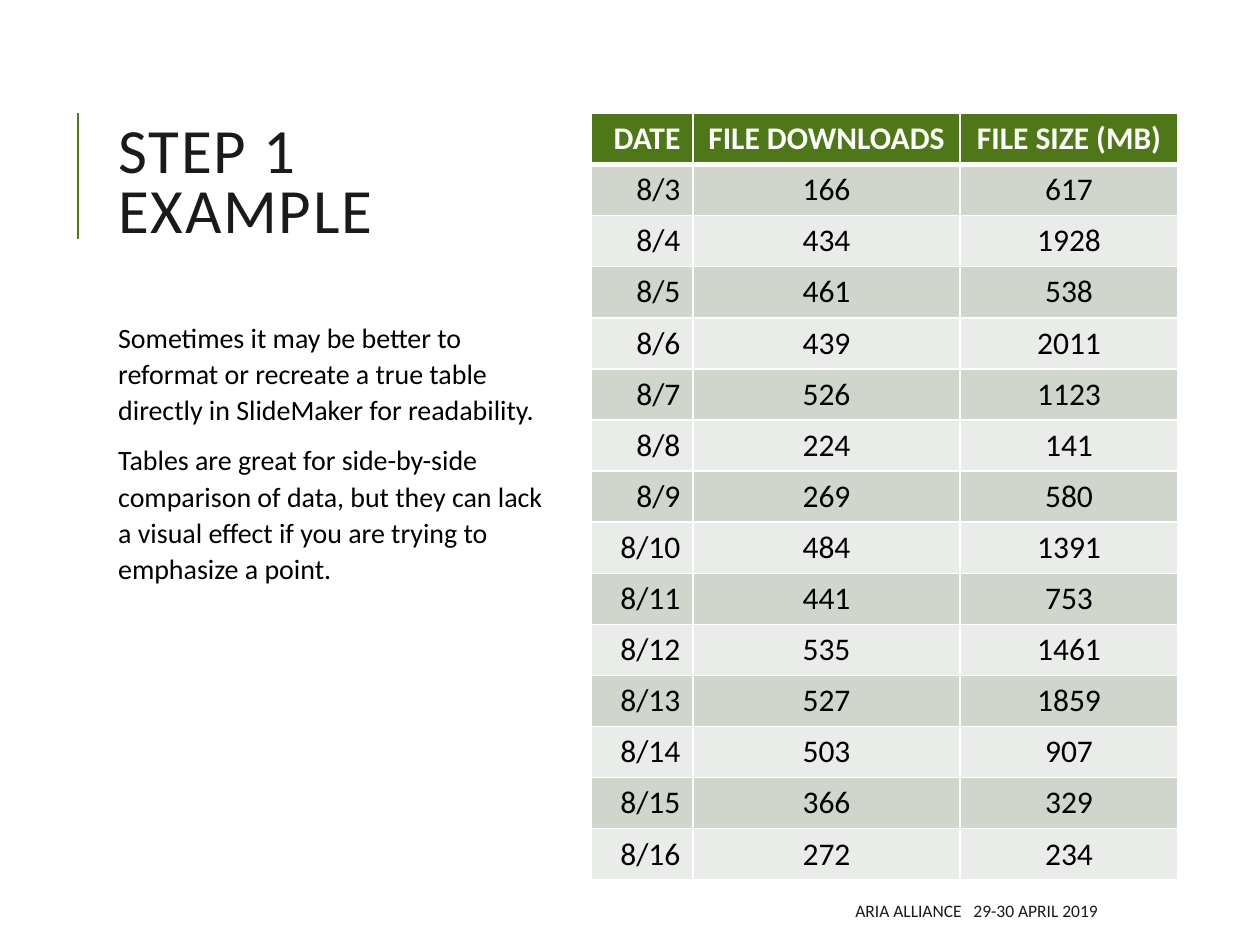
from dataclasses import dataclass

from lxml.etree import SubElement
from pptx import Presentation
from pptx.dml.color import RGBColor
from pptx.enum.shapes import MSO_CONNECTOR
from pptx.enum.text import MSO_ANCHOR, MSO_AUTO_SIZE, PP_ALIGN
from pptx.oxml.ns import qn
from pptx.util import Inches, Pt

TITLE = "STEP 1 EXAMPLE"
NOTES = [
    "Sometimes it may be better to reformat or recreate a true table "
    "directly in SlideMaker for readability.",
    "Tables are great for side-by-side comparison of data, but they can lack "
    "a visual effect if you are trying to emphasize a point.",
]
# Each footer run with its extra letter spacing in points
FOOTER = [("ARIA ALLIANCE", 0), (" ", 4.5), ("29-30 APRIL 2019", 0)]

HEADINGS = ("DATE", "FILE DOWNLOADS", "FILE SIZE (MB)")
FIRST_DAY = 3
DOWNLOADS = [166, 434, 461, 439, 526, 224, 269, 484, 441, 535, 527, 503, 366, 272]
SIZES_MB = [617, 1928, 538, 2011, 1123, 141, 580, 1391, 753, 1461, 1859, 907, 329, 234]
DAYS = [f"8/{FIRST_DAY + day}" for day in range(len(DOWNLOADS))]
ROWS = [HEADINGS, *zip(DAYS, DOWNLOADS, SIZES_MB)]


@dataclass(frozen=True)
class Theme:
    font: str = "Calibri"
    accent: str = "4E7817"
    ink: str = "1A1A1A"
    body: str = "000000"
    white: str = "FFFFFF"
    bands: tuple = ("D0D6CC", "E9ECE8")
    title_size: int = 36
    table_size: int = 18
    body_size: int = 16
    footer_size: int = 10


THEME = Theme()
WIDTH, HEIGHT = 10, 7.5
LEFT, TOP = 0.84, 0.9
TEXT_WIDTH = 0.36 * WIDTH
TABLE_LEFT, TABLE_HEIGHT = 4.69, 6.08
COLUMN_WIDTHS = (0.81, 2.12, 1.73)
COLUMN_ALIGN = (PP_ALIGN.RIGHT, PP_ALIGN.CENTER, PP_ALIGN.CENTER)


def place(shape, left, top, width, height):
    shape.left, shape.top = Inches(left), Inches(top)
    shape.width, shape.height = Inches(width), Inches(height)


def add_run(paragraph, text, size, color, bold=False, spacing=0):
    run = paragraph.add_run()
    run.text = str(text)
    font = run.font
    font.name, font.size, font.bold = THEME.font, Pt(size), bold
    font.color.rgb = RGBColor.from_string(color)
    if spacing:
        run._r.get_or_add_rPr().set("spc", str(round(spacing * 100)))


def prepare_frame(shape, anchor):
    frame = shape.text_frame
    frame.word_wrap = True
    frame.auto_size = MSO_AUTO_SIZE.NONE
    frame.vertical_anchor = anchor
    return frame


def add_text_box(slide, bounds, anchor):
    box = slide.shapes.add_textbox(*map(Inches, bounds))
    return prepare_frame(box, anchor)


def set_borders(cell, bottom):
    """Draw white borders of 1 pt, with the given width at the bottom."""
    properties = cell._tc.get_or_add_tcPr()
    widths = {"a:lnL": 1, "a:lnR": 1, "a:lnT": 1, "a:lnB": bottom}
    for index, (tag, width) in enumerate(widths.items()):
        line = SubElement(properties, qn(tag), w=str(Pt(width)))
        fill = SubElement(line, qn("a:solidFill"))
        SubElement(fill, qn("a:srgbClr"), val=THEME.white)
        properties.insert(index, line)


def add_title(slide):
    title = slide.shapes.title
    place(title, LEFT, 0.52, TEXT_WIDTH, 1.9)
    paragraph = prepare_frame(title, MSO_ANCHOR.MIDDLE).paragraphs[0]
    paragraph.alignment = PP_ALIGN.LEFT
    paragraph.line_spacing = 0.8
    add_run(paragraph, TITLE, THEME.title_size, THEME.ink, spacing=1)


def add_accent_line(slide):
    x = Inches(0.62)
    accent = slide.shapes.add_connector(
        MSO_CONNECTOR.STRAIGHT, x, Inches(TOP + 1), x, Inches(TOP))
    accent.line.color.rgb = RGBColor.from_string(THEME.accent)
    accent.line.width = Pt(1.5)
    SubElement(accent._element.spPr, qn("a:effectLst"))


def add_download_table(slide):
    table = slide.shapes.add_table(
        len(ROWS), len(HEADINGS), Inches(TABLE_LEFT), Inches(TOP),
        Inches(sum(COLUMN_WIDTHS)), Inches(TABLE_HEIGHT)).table
    for column, width in zip(table.columns, COLUMN_WIDTHS):
        column.width = Inches(width)
    for r, values in enumerate(ROWS):
        header = r == 0
        fill = THEME.accent if header else THEME.bands[(r - 1) % 2]
        color = THEME.white if header else THEME.body
        for c, value in enumerate(values):
            cell = table.cell(r, c)
            cell.fill.solid()
            cell.fill.fore_color.rgb = RGBColor.from_string(fill)
            # The header's thick rule is shared with the row below it
            set_borders(cell, bottom=3 if header else 1)
            paragraph = cell.text_frame.paragraphs[0]
            paragraph.alignment = COLUMN_ALIGN[c]
            add_run(paragraph, value, THEME.table_size, color, bold=header)


def add_notes_text(slide):
    frame = add_text_box(slide, (LEFT, 2.47, TEXT_WIDTH, 4.11), MSO_ANCHOR.TOP)
    for i, note in enumerate(NOTES):
        paragraph = frame.add_paragraph() if i else frame.paragraphs[0]
        paragraph.line_spacing = 1.08
        paragraph.space_before, paragraph.space_after = Pt(6), Pt(2)
        add_run(paragraph, note, THEME.body_size, THEME.body)


def add_footer(slide):
    frame = add_text_box(slide, (3.97, 7.08, 4.84, 0.3), MSO_ANCHOR.MIDDLE)
    paragraph = frame.paragraphs[0]
    paragraph.alignment = PP_ALIGN.RIGHT
    for text, spacing in FOOTER:
        add_run(paragraph, text, THEME.footer_size, THEME.ink, spacing=spacing)


def main():
    deck = Presentation()
    deck.slide_width, deck.slide_height = Inches(WIDTH), Inches(HEIGHT)
    title_only = deck.slide_layouts.get_by_name("Title Only")
    slide = deck.slides.add_slide(title_only)
    add_accent_line(slide)
    add_title(slide)
    add_download_table(slide)
    add_notes_text(slide)
    add_footer(slide)
    deck.save("out.pptx")


if __name__ == "__main__":
    main()
